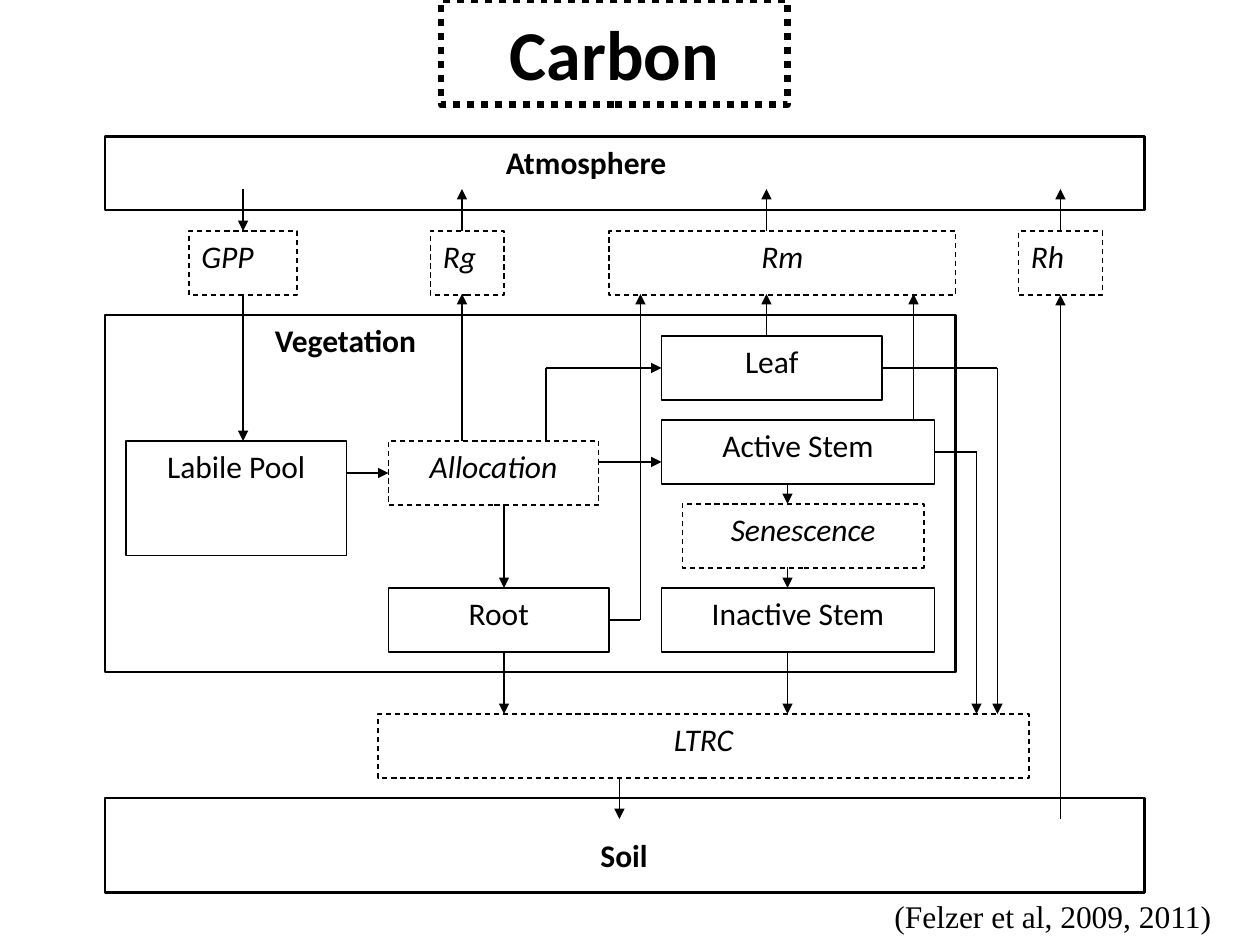
import pptx
import pptx.dml.color
import pptx.enum.dml
import pptx.enum.shapes
import pptx.enum.text
import pptx.oxml
import pptx.oxml.ns
import pptx.util

BLACK = pptx.dml.color.RGBColor(0x00, 0x00, 0x00)
COLUMNS, ROWS = 120, 90
WIDTH, HEIGHT = pptx.util.Inches(10), pptx.util.Inches(7.5)
BOX_ROWS = 6.1
TOP, LEFT, BOTTOM, RIGHT = range(4)

DASH = pptx.enum.dml.MSO_LINE.DASH
DOTS = pptx.enum.dml.MSO_LINE.ROUND_DOT
PP_LEFT = pptx.enum.text.PP_ALIGN.LEFT
PP_CENTER = pptx.enum.text.PP_ALIGN.CENTER
ANCHOR = pptx.enum.text.MSO_ANCHOR

PLAIN = {"name": "Calibri", "size": pptx.util.Pt(18)}
BOLD = {**PLAIN, "bold": True}
ITALIC = {**PLAIN, "italic": True}
HEADING = {**BOLD, "size": pptx.util.Pt(40)}
SERIF = {**PLAIN, "name": "Times New Roman"}

RESERVOIRS = [(10, 30, 81, 34), (10, 76, 99, 9), (10, 13, 99, 7)]
CAPTIONS = [
    ("Vegetation", (25, 30, 18, 4.8), BOLD, True),
    ("Soil", (56, 79, 9, 4.8), BOLD, True),
    ("Atmosphere", (47, 13, 20, 4.8), BOLD, True),
    ("(Felzer et al, 2009, 2011)", (84, 84.8, 33, 4.8), SERIF, False),
]
POOLS = {
    "Labile Pool": (12, 42, 21, 10.9),
    "Leaf": (63, 32, 21, BOX_ROWS),
    "Active Stem": (63, 40, 26, BOX_ROWS),
    "Inactive Stem": (63, 56, 26, BOX_ROWS),
    "Root": (37, 56, 21, BOX_ROWS),
}
FLUXES = {
    "GPP": (18, 22, 10.3, BOX_ROWS),
    "Rg": (41, 22, 7, BOX_ROWS),
    "Rm": (58, 22, 33, BOX_ROWS),
    "Rh": (97, 22, 8, BOX_ROWS),
    "Allocation": (37, 42, 20, BOX_ROWS),
    "Senescence": (65, 48, 23, BOX_ROWS),
    "LTRC": (36, 68, 62, BOX_ROWS),
}
LEFT_ALIGNED = {"GPP", "Rg", "Rh"}
FLOWS = [
    [(23.15, 18), ("GPP", TOP)],
    [("GPP", BOTTOM), (23.15, 42)],
    [(44, 22), (44, 18)],
    [(73, 22), (73, 18)],
    [("Rh", TOP), (101, 18)],
    [(101, 78), ("Rh", BOTTOM)],
    [(33, 45.05), ("Allocation", LEFT)],
    [(44, 42), (44, 28)],
    [(52, 42), (52, 35.05), ("Leaf", LEFT)],
    [(57, 44), (63, 44)],
    [(48, 48), (48, 56)],
    [("Root", RIGHT), (61, 59.05), (61, 28)],
    [(73, 32), (73, 28)],
    [(87, 40), (87, 28)],
    [("Leaf", RIGHT), (95, 35.05), (95, 68)],
    [("Active Stem", RIGHT), (93, 43.05), (93, 68)],
    [(75, 46), (75, 48)],
    [(75, 54), (75, 56)],
    [(48, 62), (48, 68)],
    [(75, 62), (75, 68)],
    [(59, 74), (59, 78)],
]


def grid(column, row):
    """Convert a grid position or extent to slide lengths."""
    return round(column * WIDTH / COLUMNS), round(row * HEIGHT / ROWS)


def area(cells):
    """Return left, top, width and height of a grid area."""
    return grid(*cells[:2]) + grid(*cells[2:])


def apply(target, values):
    """Set each attribute named in a dict of format values."""
    for attribute, value in values.items():
        setattr(target, attribute, value)


def stroke(line, points, dash=None):
    """Format a black outline."""
    line.color.rgb = BLACK
    apply(line, {"width": pptx.util.Pt(points), "dash_style": dash})


def write(holder, wording, font, align=PP_LEFT, anchor=ANCHOR.TOP, wrap=True):
    """Put formatted wording into a shape."""
    frame = holder.text_frame
    apply(frame, {"word_wrap": wrap, "vertical_anchor": anchor,
                  "auto_size": pptx.enum.text.MSO_AUTO_SIZE.NONE})
    paragraph = frame.paragraphs[0]
    paragraph.alignment = align
    run = paragraph.add_run()
    run.text = wording
    apply(run.font, font)
    run.font.color.rgb = BLACK


def add_title(slide, wording, cells):
    """Place and outline the title placeholder."""
    title = slide.shapes.title
    apply(title, dict(zip(("left", "top", "width", "height"), area(cells))))
    stroke(title.line, 4, DOTS)
    write(title, wording, HEADING, PP_CENTER, ANCHOR.MIDDLE)


def add_box(slide, cells, points, dash=None):
    """Add an unfilled rectangle."""
    box = slide.shapes.add_shape(
        pptx.enum.shapes.MSO_SHAPE.RECTANGLE, *area(cells))
    box.shadow.inherit = False
    box.fill.background()
    stroke(box.line, points, dash)
    return box


def add_stages(slide, stages, font, dash=None):
    """Add labelled boxes and return them by name."""
    boxes = {}
    for name, cells in stages.items():
        boxes[name] = add_box(slide, cells, 0.75, dash)
        align = PP_LEFT if name in LEFT_ALIGNED else PP_CENTER
        write(boxes[name], name, font, align)
    return boxes


def add_flow(slide, stops, boxes):
    """Draw straight legs between stops, with an arrowhead on the last."""
    for start, end in zip(stops, stops[1:]):
        places = [(0, 0) if stop[0] in boxes else grid(*stop)
                  for stop in (start, end)]
        leg = slide.shapes.add_connector(
            pptx.enum.shapes.MSO_CONNECTOR.STRAIGHT, *places[0], *places[1])
        for stop, join in ((start, leg.begin_connect), (end, leg.end_connect)):
            if stop[0] in boxes:
                join(boxes[stop[0]], stop[1])
        stroke(leg.line, 0.75)
        properties = leg._element.spPr
        pptx.oxml.ns.qn("a:effectLst")
        properties.append(pptx.oxml.parse_xml(
            "<a:effectLst %s/>" % pptx.oxml.ns.nsdecls("a")))
    leg.line._get_or_add_ln().append(pptx.oxml.parse_xml(
        '<a:tailEnd %s type="triangle"/>' % pptx.oxml.ns.nsdecls("a")))


def main():
    """Build the carbon cycle slide."""
    deck = pptx.Presentation()
    apply(deck, {"slide_width": WIDTH, "slide_height": HEIGHT})
    slide = deck.slides.add_slide(deck.slide_layouts[5])
    add_title(slide, "Carbon", (42, 0, 33, 10))
    for cells in RESERVOIRS:
        add_box(slide, cells, 1.5)
    boxes = {**add_stages(slide, POOLS, PLAIN),
             **add_stages(slide, FLUXES, ITALIC, DASH)}
    for wording, cells, font, wrap in CAPTIONS:
        caption = slide.shapes.add_textbox(*area(cells))
        write(caption, wording, font, wrap=wrap)
    for stops in FLOWS:
        add_flow(slide, stops, boxes)
    deck.save("out.pptx")


if __name__ == "__main__":
    main()
